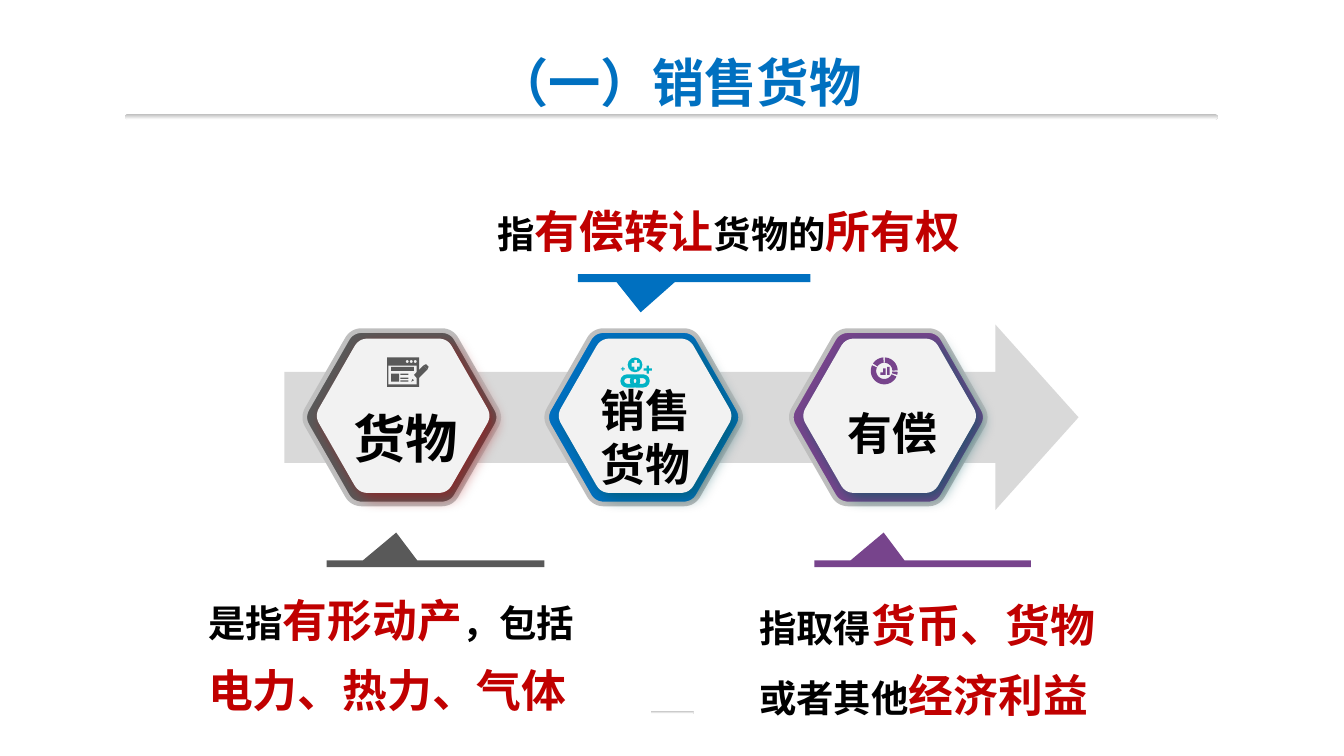
import math
from dataclasses import dataclass
from typing import Any

import lxml.etree
import pptx
import pptx.dml.color
import pptx.enum.shapes
import pptx.enum.text
import pptx.oxml.ns
import pptx.util

Inches = pptx.util.Inches
Pt = pptx.util.Pt
qn = pptx.oxml.ns.qn
Shape = pptx.enum.shapes.MSO_SHAPE
Align = pptx.enum.text.PP_ALIGN
Point = tuple[float, float]
Box = tuple[float, float, float, float]
Spans = tuple[tuple[str, bool], ...]  # wording, emphasised or not


@dataclass(frozen=True)
class Theme:
    blue: str = "0070C0"
    grey: str = "595959"
    purple: str = "77448C"
    teal: str = "01B3C5"
    red: str = "C00000"
    black: str = "000000"
    white: str = "FFFFFF"
    panel: str = "F2F2F2"
    arrow: str = "D9D9D9"
    rim: str = "BFBFBF"
    red_glow: str = "A21011"
    teal_glow: str = "005962"
    title_font: str = "Arial"
    label_font: str = "Quicksand"
    body_font: str = "Noto Sans CJK SC"
    title_size: int = 28
    strong_size: int = 24
    plain_size: int = 20


@dataclass(frozen=True)
class Step:
    left: float
    color: str
    glow: str
    label: str
    label_box: Box
    label_size: int
    callout_box: Box
    callout_tip: Point
    note_box: Box
    note: Spans


THEME = Theme()
STEPS = (
    Step(2.26, THEME.grey, THEME.red_glow, "货物", (2.51, 2.98, 1.02, 0.55), THEME.title_size,
         (2.43, 4.17, 1.62, 0.05), (-0.18, -4.65), (1.45, 4.24, 3.06, 1.08),
         (("是指", False), ("有形动产", True), ("，包括", False), ("电力、热力、气体", True))),
    Step(4.06, THEME.blue, THEME.teal_glow, "销售货物", (4.25, 2.81, 1.11, 0.88), THEME.strong_size,
         (4.3, 2.04, 1.73, 0.06), (-0.23, 4.25), (3.6, 1.35, 3.73, 0.55),
         (("指", False), ("有偿转让", True), ("货物的", False), ("所有权", True))),
    Step(5.88, THEME.purple, THEME.teal_glow, "有偿", (6.13, 2.98, 1.02, 0.48), THEME.strong_size,
         (6.06, 4.17, 1.61, 0.05), (-0.18, -4.65), (5.55, 4.28, 2.89, 1.08),
         (("指取得", False), ("货币、货物", True), ("或者其他", False), ("经济利益", True))),
)


def rgb(color: str) -> Any:
    return pptx.dml.color.RGBColor.from_string(color)


def paint(shape: Any, fill: str | None, line: str | None = None, width: float = 0) -> Any:
    shape.shadow.inherit = False
    if fill:
        shape.fill.solid()
        shape.fill.fore_color.rgb = rgb(fill)
    else:
        shape.fill.background()
    if line:
        shape.line.color.rgb = rgb(line)
        shape.line.width = Pt(width)
    else:
        shape.line.fill.background()
    return shape


def add_preset(shapes: Any, kind: Any, box: Box, fill: str | None, line: str | None = None,
               width: float = 0, adjust: tuple[float, ...] = ()) -> Any:
    shape = shapes.add_shape(kind, *(Inches(value) for value in box))
    for index, value in enumerate(adjust):
        shape.adjustments[index] = value
    return paint(shape, fill, line, width)


def add_polygon(shapes: Any, points: list[Point], fill: str,
                line: str | None = None, width: float = 0) -> Any:
    corners = [(Inches(x), Inches(y)) for x, y in points]
    builder = shapes.build_freeform(*corners[0], scale=1.0)
    builder.add_line_segments(corners[1:], close=True)
    return paint(builder.convert_to_shape(), fill, line, width)


def add_rule(shapes: Any, box: Box) -> None:
    rule = add_preset(shapes, Shape.ROUNDED_RECTANGLE, box, THEME.white, adjust=(0.5,))
    rule.fill.gradient()
    rule.fill.gradient_angle = 270
    for stop, color in zip(rule.fill.gradient_stops, (THEME.rim, THEME.white)):
        stop.color.rgb = rgb(color)


def write_text(shape: Any, spans: Spans, font: str, size: int, color: str,
               align: Any, inset: Point = (0.1, 0.05), spacing: float = 1.0) -> None:
    frame = shape.text_frame
    frame.word_wrap = True
    frame.auto_size = pptx.enum.text.MSO_AUTO_SIZE.SHAPE_TO_FIT_TEXT
    frame.vertical_anchor = pptx.enum.text.MSO_ANCHOR.TOP
    frame.margin_left = frame.margin_right = Inches(inset[0])
    frame.margin_top = frame.margin_bottom = Inches(inset[1])
    para = frame.paragraphs[0]
    para.alignment = align
    para.line_spacing = spacing
    para.font.name, para.font.size, para.font.bold = font, Pt(size), True
    para.font.color.rgb = rgb(color)
    # Chinese glyphs take the East Asian font
    defaults = para._p.pPr.find(qn("a:defRPr"))
    lxml.etree.SubElement(defaults, qn("a:ea")).set("typeface", THEME.body_font)
    for wording, strong in spans:
        span = para.add_run()
        span.text = wording
        if strong:
            span.font.size = Pt(THEME.strong_size)
            span.font.color.rgb = rgb(THEME.red)


def add_text(shapes: Any, box: Box, spans: Spans, *style: Any) -> None:
    write_text(shapes.add_textbox(*(Inches(value) for value in box)), spans, *style)


def hexagon(left: float, top: float, scale: float) -> list[Point]:
    """Hexagon whose corners are rounded with quadratic curves."""
    corners = [(0.36, 0), (1.1, 0), (1.47, 0.645), (1.1, 1.29), (0.36, 1.29), (-0.01, 0.645)]
    points = []
    for index, corner in enumerate(corners):
        ends = []
        for other in (corners[index - 1], corners[(index + 1) % 6]):
            part = 0.075 / math.dist(corner, other)
            ends.append([c + (o - c) * part for c, o in zip(corner, other)])
        for step in range(9):
            t = step / 8
            x, y = ((1 - t) ** 2 * a + 2 * t * (1 - t) * c + t * t * b
                    for a, c, b in zip(ends[0], corner, ends[1]))
            points.append((left + x * scale, top + y * scale))
    return points


def add_glow(shape: Any, color: str) -> None:
    effects = shape._element.spPr.find(qn("a:effectLst"))
    glow = lxml.etree.SubElement(effects, qn("a:outerShdw"), blurRad=str(Pt(8)), dist=str(Pt(4)),
                                 dir="2700000", algn="tl", rotWithShape="0")
    tint = lxml.etree.SubElement(glow, qn("a:srgbClr"), val=color)
    lxml.etree.SubElement(tint, qn("a:alpha"), val="64000")


def add_bars(shapes: Any, boxes: tuple[Box, ...], color: str) -> None:
    for box in boxes:
        add_preset(shapes, Shape.RECTANGLE, box, color)


def add_form_icon(shapes: Any) -> None:
    add_bars(shapes, ((2.88, 2.66, 0.24, 0.22),), THEME.grey)
    add_bars(shapes, ((2.89, 2.72, 0.21, 0.14),), THEME.panel)
    for left in (3.02, 3.05, 3.08):
        add_preset(shapes, Shape.OVAL, (left, 2.68, 0.02, 0.02), THEME.panel)
    lines = tuple((2.98, top, 0.06, 0.01) for top in (2.78, 2.81, 2.83))
    add_bars(shapes, ((2.91, 2.73, 0.17, 0.03), (2.91, 2.78, 0.06, 0.06), *lines), THEME.grey)
    # Pencil: tip, shaft, end
    for points in ([(3.07, 2.82), (3.06, 2.84), (3.08, 2.83)],
                   [(3.15, 2.72), (3.08, 2.79), (3.11, 2.82), (3.18, 2.75)],
                   [(3.15, 2.72), (3.17, 2.71), (3.19, 2.73), (3.18, 2.75)]):
        add_polygon(shapes, points, THEME.grey)


def add_link_icon(shapes: Any) -> None:
    for left in (4.63, 4.7):
        add_preset(shapes, Shape.ROUNDED_RECTANGLE, (left, 2.8, 0.12, 0.07), None, THEME.teal, 2, (0.5,))
    add_preset(shapes, Shape.OVAL, (4.67, 2.66, 0.11, 0.11), THEME.teal)
    for box, color in (((4.7, 2.68, 0.06, 0.07), THEME.panel), ((4.79, 2.72, 0.06, 0.06), THEME.teal),
                       ((4.62, 2.73, 0.03, 0.03), THEME.teal)):
        add_preset(shapes, Shape.CROSS, box, color, adjust=(0.36,))


def add_chart_icon(shapes: Any) -> None:
    for start, end in ((25, 205), (213, 266), (273, 358), (4, 17)):
        angles = [math.radians(start + (end - start) * step / 24) for step in range(25)]
        ring = [(0.1, angle) for angle in angles] + [(0.06, angle) for angle in reversed(angles)]
        add_polygon(shapes, [(6.58 + r * math.cos(a), 2.76 + r * math.sin(a)) for r, a in ring], THEME.purple)
    add_bars(shapes, ((6.55, 2.77, 0.02, 0.02), (6.57, 2.74, 0.02, 0.05), (6.6, 2.73, 0.02, 0.06)), THEME.purple)


def add_step(shapes: Any, step: Step) -> None:
    add_preset(shapes, Shape.RECTANGULAR_CALLOUT, step.callout_box, step.color, adjust=step.callout_tip)
    add_text(shapes, step.note_box, step.note, THEME.body_font, THEME.plain_size, THEME.black,
             Align.LEFT, (0.1, 0.05), 1.3)
    add_polygon(shapes, hexagon(step.left, 2.46, 1), step.color, THEME.rim, 2.5)
    add_glow(add_polygon(shapes, hexagon(step.left + 0.09, 2.52, 0.89), THEME.panel), step.glow)
    add_text(shapes, step.label_box, ((step.label, False),), THEME.label_font, step.label_size,
             THEME.black, Align.CENTER, (0.07, 0.04))


def main() -> None:
    # Widescreen page, 16 to 9
    deck = pptx.Presentation()
    deck.slide_width, deck.slide_height = Inches(10), Inches(10 * 9 / 16)
    page = deck.slides.add_slide(deck.slide_layouts[5])
    shapes = page.shapes

    # Title and rules
    for box in ((0.93, 0.85, 8.13, 0.04), (4.84, 5.29, 0.32, 0.02)):
        add_rule(shapes, box)
    title = shapes.title
    title.left, title.top, title.width, title.height = map(Inches, (1.02, 0.33, 8.06, 0.55))
    write_text(title, (("（一）销售货物", False),), THEME.title_font, THEME.title_size,
               THEME.blue, Align.CENTER, (0.07, 0.04))

    # Arrow behind the steps
    arrow = add_preset(shapes, Shape.DOWN_ARROW, (4.38, 0.15, 1.38, 5.91), THEME.arrow, adjust=(0.491, 0.448))
    arrow.rotation = 270

    # Steps with their icons
    for step, add_icon in zip(STEPS, (add_form_icon, add_link_icon, add_chart_icon)):
        add_step(shapes, step)
        add_icon(shapes.add_group_shape().shapes)
    deck.save("out.pptx")


if __name__ == "__main__":
    main()
